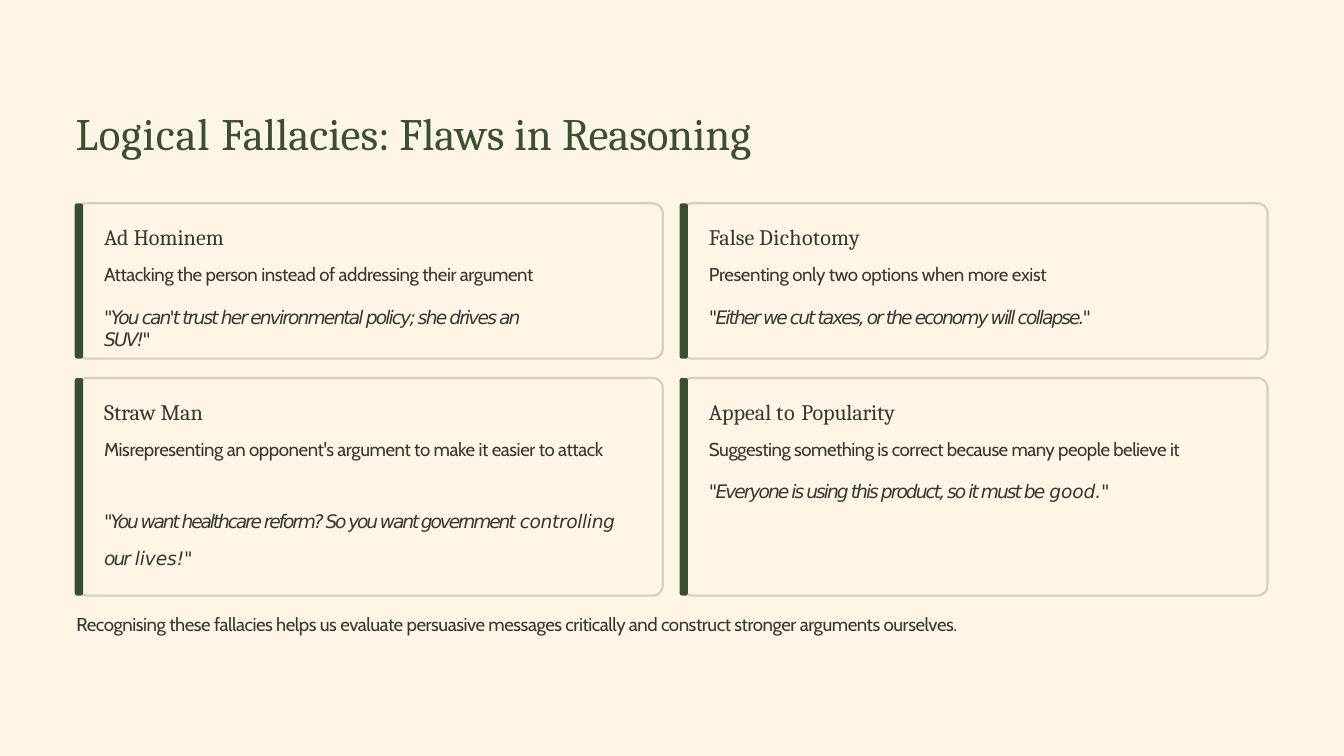
from pptx import Presentation
from pptx.dml.color import RGBColor
from pptx.enum.shapes import MSO_SHAPE
from pptx.enum.text import MSO_ANCHOR, PP_ALIGN
from pptx.util import Inches, Pt

WIDE, HIGH = 16, 9
EDGE = 0.9                      # left margin
PITCH = (WIDE - 2 * EDGE + 0.2) / 2   # from one column to the next
CARD = 6.97                     # card width
TOP, GAP = 2.42, 0.23
ROWS = [1.85, 2.59]             # card heights
BAR = 0.1
PAD = 0.34
HUES = {"page": "FEF5E7", "green": "37502E", "line": "D9CCB9", "ink": "3A362F"}
SERIF, SANS, SLANT = "Cambria", "Cabin", "DejaVu Sans"

# Each text is a list of (words, letter spacing); each quote is a list of lines.
CARDS = [
    dict(head=[("Ad Hominem", 0)], width=5.54,
         fact=[("Attacking the person instead of addressing their argument", -0.34)],
         quote=[[("\"You can't trust her environmental policy; she drives an SUV!\"", -1.6)]]),
    dict(head=[("False ", 0), ("Dichotomy", 0.3)], width=4.59,
         fact=[("Presenting only two options when more exist", -0.31)],
         quote=[[("\"Either we cut taxes, or the economy will collapse.\"", -1.65)]]),
    dict(head=[("Straw Man", 0)], width=6.6, before=42.8,
         fact=[("Misrepresenting an opponent's argument to make it easier to attack", -0.35)],
         quote=[[("\"You want healthcare reform? So you want government ", -1.8),
                 ("controlling", -0.3)],
                [("our ", -1.7), ("lives!\"", -0.1)]]),
    dict(head=[("Appeal ", 0), ("to ", 0.8), ("Popularity", -0.1)], width=5.93,
         fact=[("Suggesting something is correct because many people believe it", -0.4)],
         quote=[[("\"Everyone is using this product, so it must be ", -1.67),
                 ("good.\"", -0.1)]]),
]


def tint(name):
    return RGBColor.from_string(HUES[name])


def write(frame, runs, font=SANS, size=16, hue="ink", before=1, italic=False):
    """Add one paragraph, using the frame's empty first one if there is one."""
    para = frame.paragraphs[0]
    if para.runs:
        para = frame.add_paragraph()
    para.alignment = PP_ALIGN.LEFT
    para.space_before = Pt(before)
    for words, space in runs:
        run = para.add_run()
        run.text = words
        run.font.name, run.font.size = font, Pt(size)
        run.font.italic = italic
        run.font.color.rgb = tint(hue)
        run._r.get_or_add_rPr().set("spc", str(round(space * 100)))


def trim(frame):
    frame.word_wrap = True
    frame.vertical_anchor = MSO_ANCHOR.TOP
    frame.margin_left = frame.margin_right = frame.margin_bottom = 0
    frame.margin_top = Inches(0.01)
    return frame


def box(slide, *place):
    return trim(slide.shapes.add_textbox(*map(Inches, place)).text_frame)


def panel(slide, x, y, w, h, curve, fill=None, line=None):
    shape = slide.shapes.add_shape(MSO_SHAPE.ROUNDED_RECTANGLE,
                                   *map(Inches, (x, y, w, h)))
    shape.shadow.inherit = False
    shape.adjustments[0] = curve / min(w, h)
    if fill:
        shape.fill.solid()
        shape.fill.fore_color.rgb = tint(fill)
    else:
        shape.fill.background()
    if line:
        shape.line.color.rgb = tint(line)
        shape.line.width = Pt(1.8)
    else:
        shape.line.fill.background()


def card(slide, x, y, h, item):
    panel(slide, x + 0.02, y, CARD, h, 0.12, line="line")
    panel(slide, x - 0.01, y, BAR, h, 0.03, fill="green")
    frame = box(slide, x + PAD, y + GAP, item["width"], h - 2 * GAP)
    write(frame, item["head"], font=SERIF, size=19)
    write(frame, item["fact"], before=11.3)
    before = item.get("before", 17.1)
    for runs in item["quote"]:
        write(frame, runs, font=SLANT, before=before, italic=True)
        before = 12.3


def main():
    deck = Presentation()
    deck.slide_width, deck.slide_height = Inches(WIDE), Inches(HIGH)
    slide = deck.slides.add_slide(deck.slide_layouts[5])
    slide.background.fill.solid()
    slide.background.fill.fore_color.rgb = tint("page")

    title = slide.shapes.title
    title.left, title.top, title.width, title.height = map(
        Inches, (EDGE, 1.25, 9, 0.67))
    write(trim(title.text_frame),
          [("Logical ", 0.7), ("Fallacies: Flaws in ", 0), ("Reasoning", -0.1)],
          font=SERIF, size=38.5, hue="green")

    for i, item in enumerate(CARDS):
        row, col = divmod(i, 2)
        y = TOP + sum(ROWS[:row]) + row * GAP
        card(slide, EDGE + col * PITCH, y, ROWS[row], item)

    foot = TOP + sum(ROWS) + 2 * GAP
    write(box(slide, EDGE + 0.01, foot - 0.03, 11.14, 0.3),
          [("Recognising these fallacies helps us evaluate persuasive messages "
            "critically and construct stronger arguments ourselves.", -0.36)])
    deck.save("out.pptx")


if __name__ == "__main__":
    main()
